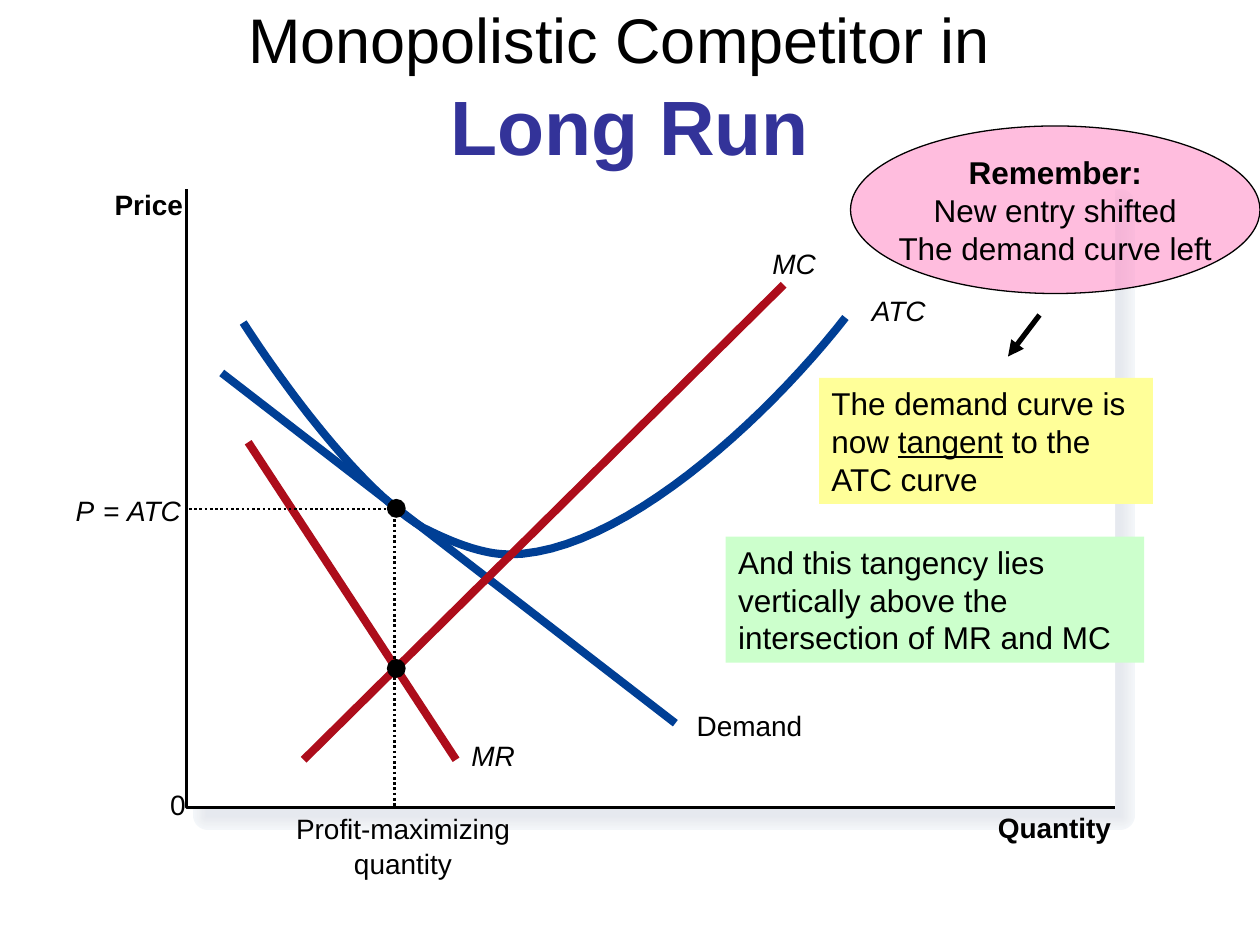
from dataclasses import dataclass

from lxml import etree
from pptx import Presentation
from pptx.dml.color import RGBColor
from pptx.enum.dml import MSO_LINE
from pptx.enum.shapes import MSO_CONNECTOR, MSO_SHAPE
from pptx.enum.text import MSO_ANCHOR, MSO_AUTO_SIZE, PP_ALIGN
from pptx.oxml.ns import qn
from pptx.util import Inches, Pt

RECT, OVAL = MSO_SHAPE.RECTANGLE, MSO_SHAPE.OVAL
STRAIGHT = MSO_CONNECTOR.STRAIGHT
DOTTED = MSO_LINE.ROUND_DOT
TOP, MIDDLE = MSO_ANCHOR.TOP, MSO_ANCHOR.MIDDLE
LEFT, CENTER = PP_ALIGN.LEFT, PP_ALIGN.CENTER
GROW = MSO_AUTO_SIZE.SHAPE_TO_FIT_TEXT

BLACK = RGBColor(0x00, 0x00, 0x00)
WHITE = RGBColor(0xFF, 0xFF, 0xFF)
INDIGO = RGBColor(0x33, 0x33, 0x99)
BLUE = RGBColor(0x00, 0x3F, 0x95)
RED = RGBColor(0xAD, 0x0D, 0x1B)
YELLOW = RGBColor(0xFF, 0xFF, 0x99)
GREEN = RGBColor(0xCC, 0xFF, 0xCC)
PINK = RGBColor(0xFF, 0x99, 0xCC)
SHADOW_TINTS = [RGBColor.from_string(tint) for tint in (
    "F3F6F9", "F2F4F8", "F1F4F7", "F0F2F5", "EEF1F4", "EDEFF3",
    "EBEEF2", "EAECF1", "E9EBF0", "E7EAEF", "E6E9EF")]

Point = tuple[float, float]
Box = tuple[float, float, float, float]


@dataclass
class Label:
    text: str
    box: Box
    bold: bool = False
    italic: bool = False


@dataclass
class Segment:
    start: Point
    end: Point
    color: RGBColor
    width: float = 4.63


@dataclass
class Span:
    text: str
    size: float = 18
    color: RGBColor = BLACK
    bold: bool = False
    italic: bool = False
    underline: bool = False


AXES = [(1.48, 1.5), (1.48, 6.41), (8.85, 6.41)]
GUIDES = [(1.5, 4.04), (3.13, 4.04), (3.13, 6.41)]
ATC_BEZIERS = [
    ((6.71, 2.52), (6.07, 3.34), (4.91, 4.4), (4.04, 4.4)),
    ((4.04, 4.4), (3.75, 4.4), (3.41, 4.21), (3.36, 4.19)),
    ((3.36, 4.19), (2.86, 3.89), (2.26, 3.07), (1.93, 2.56)),
]
DEMAND = Segment((1.76, 2.96), (5.36, 5.74), BLUE)
MR = Segment((1.97, 3.51), (3.62, 6.03), RED)
MC = Segment((6.22, 2.26), (2.41, 6.03), RED)
ARROW = Segment((8.25, 2.5), (8, 2.83), BLACK, 3)
LABELS = [
    Label("Quantity", (7.92, 6.43, 1, 0.31), bold=True),
    Label("Price", (0.91, 1.49, 0.65, 0.31), bold=True),
    Label("0", (1.35, 6.25, 0.22, 0.3)),
    Label("Demand", (5.53, 5.62, 0.93, 0.3)),
    Label("MR", (3.74, 5.86, 0.35, 0.27), italic=True),
    Label("ATC", (6.92, 2.33, 0.44, 0.27), italic=True),
    Label("MC", (6.13, 1.96, 0.35, 0.27), italic=True),
    Label("Profit-maximizing", (2.35, 6.44, 1.78, 0.3)),
    Label("quantity", (2.81, 6.72, 0.86, 0.3)),
    Label("P", (0.6, 3.92, 0.24, 0.31), italic=True),
    Label(" =", (0.76, 3.92, 0.35, 0.3)),
    Label("ATC", (1.01, 3.92, 0.44, 0.27), italic=True),
]


def add_spans(p, spans: list[Span]) -> None:
    for span in spans:
        r = p.add_run()
        r.text = span.text
        font = r.font
        font.name, font.size = "Arial", Pt(span.size)
        font.bold, font.italic, font.underline = span.bold, span.italic, span.underline
        font.color.rgb = span.color


def add_block(s, kind, box: Box, fill: RGBColor, line: RGBColor | None = None, width: float = 0):
    sp = s.shapes.add_shape(kind, *map(Inches, box))
    sp.shadow.inherit = False
    sp.fill.solid()
    sp.fill.fore_color.rgb = fill
    if line is None:
        sp.line.fill.background()
    else:
        sp.line.color.rgb = line
        sp.line.width = Pt(width)
    return sp


def add_segment(s, seg: Segment):
    sp = s.shapes.add_connector(STRAIGHT, *map(Inches, seg.start + seg.end))
    sp.line.color.rgb = seg.color
    sp.line.width = Pt(seg.width)
    etree.SubElement(sp._element.spPr, qn("a:effectLst"))
    return sp


def add_path(s, points: list[Point], color: RGBColor, width: float):
    start, *rest = [(Inches(x), Inches(y)) for x, y in points]
    builder = s.shapes.build_freeform(*start)
    builder.add_line_segments(rest, close=False)
    sp = builder.convert_to_shape()
    sp.shadow.inherit = False
    sp.fill.background()
    sp.line.color.rgb = color
    sp.line.width = Pt(width)
    return sp


def bezier_points(curve: tuple[Point, ...], steps: int = 24) -> list[Point]:
    points = []
    for i in range(steps + 1):
        t = i / steps
        weights = ((1 - t) ** 3, 3 * t * (1 - t) ** 2, 3 * t * t * (1 - t), t ** 3)
        points.append(tuple(sum(w * c for w, c in zip(weights, axis)) for axis in zip(*curve)))
    return points


def add_label(s, label: Label) -> None:
    tf = s.shapes.add_textbox(*map(Inches, label.box)).text_frame
    tf.margin_left = tf.margin_right = tf.margin_top = tf.margin_bottom = 0
    tf.word_wrap = False
    tf.auto_size = GROW
    add_spans(tf.paragraphs[0], [Span(label.text, 16, bold=label.bold, italic=label.italic)])


def add_note(s, box: Box, fill: RGBColor, spans: list[Span]) -> None:
    tf = add_block(s, RECT, box, fill).text_frame
    tf.word_wrap = True
    tf.auto_size = GROW
    tf.vertical_anchor = TOP
    tf.paragraphs[0].alignment = LEFT
    add_spans(tf.paragraphs[0], spans)


def add_title(s) -> None:
    tf = s.shapes.add_textbox(*map(Inches, (0.5, 0, 9, 1.25))).text_frame
    tf.word_wrap = True
    tf.vertical_anchor = MIDDLE
    p = tf.paragraphs[0]
    p.alignment = CENTER
    add_spans(p, [Span("Monopolistic Competitor in", 36), Span(" ", 44)])
    p.add_line_break()
    add_spans(p, [Span("Long Run", 44, INDIGO, bold=True)])


def add_reminder(s) -> None:
    sp = add_block(s, OVAL, (6.75, 1, 3.25, 1.33), PINK, BLACK, 0.75)
    color = sp._element.spPr.find(qn("a:solidFill"))[0]
    etree.SubElement(color, qn("a:alpha"), val="64000")
    tf = sp.text_frame
    tf.word_wrap = False
    tf.vertical_anchor = MIDDLE
    lines = ["Remember:", "New entry shifted", "The demand curve left"]
    for i, text in enumerate(lines):
        p = tf.add_paragraph() if i else tf.paragraphs[0]
        p.alignment = CENTER
        add_spans(p, [Span(text, bold=i == 0)])
    arrow = add_segment(s, ARROW)
    etree.SubElement(arrow.line._get_or_add_ln(), qn("a:tailEnd"), type="triangle")


def main() -> None:
    """Build the long-run monopolistic competition slide."""
    prs = Presentation()
    prs.slide_width, prs.slide_height = Inches(10), Inches(7.5)
    s = prs.slides.add_slide(prs.slide_layouts[6])
    add_title(s)
    for i, tint in enumerate(SHADOW_TINTS):
        add_block(s, RECT, (1.65, 1.62, 7.24, 4.85), tint, tint, 16.75 - 1.52 * i)
    add_block(s, RECT, (1.48, 1.5, 7.37, 4.92), WHITE)
    add_path(s, AXES, BLACK, 1.5)
    for seg in (DEMAND, MR):
        add_segment(s, seg)
    add_path(s, [pt for curve in ATC_BEZIERS for pt in bezier_points(curve)], BLUE, 4.63)
    add_segment(s, MC)
    add_path(s, GUIDES, BLACK, 1.5).line.dash_style = DOTTED
    for top in (3.96, 5.23):
        add_block(s, OVAL, (3.07, top, 0.15, 0.15), BLACK)
    for label in LABELS:
        add_label(s, label)
    add_note(s, (6.5, 3, 2.65, 1), YELLOW, [
        Span("The demand curve is now "), Span("tangent", underline=True), Span(" to the ATC curve")])
    add_note(s, (5.76, 4.26, 3.32, 1), GREEN, [
        Span("And this tangency lies vertically above the intersection of MR and MC")])
    add_reminder(s)
    prs.save("out.pptx")


if __name__ == "__main__":
    main()
